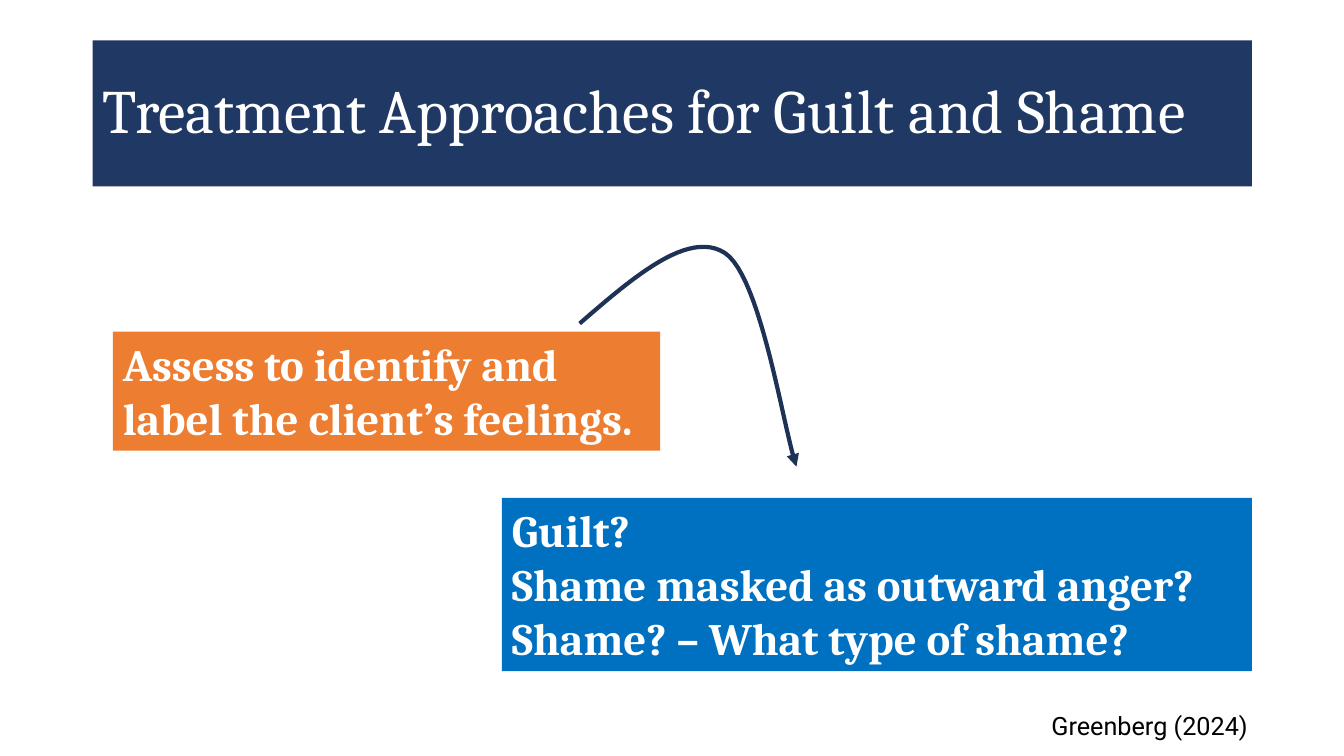
from dataclasses import dataclass

from lxml.etree import SubElement
from pptx import Presentation
from pptx.dml.color import RGBColor
from pptx.enum.text import MSO_ANCHOR, MSO_AUTO_SIZE as AutoSize, PP_ALIGN as Align
from pptx.oxml.ns import qn
from pptx.util import Inches, Pt


@dataclass(frozen=True)
class Theme:
    navy: str = "203864"
    orange: str = "ED7D31"
    blue: str = "0070C0"
    arrow: str = "1E3256"
    white: str = "FFFFFF"
    black: str = "000000"
    serif: str = "Cambria"
    sans: str = "Roboto"
    title_size: int = 44
    step_size: int = 32
    citation_size: int = 18
    arrow_width: int = 3


THEME = Theme()

# Places are percentages of the slide: left, top, width, height.
TITLE = "Treatment Approaches for Guilt and Shame"
TITLE_PLACE = (6.9, 5.33, 86.25, 19.33)

CITATION = "Greenberg (2024) "
CITATION_PLACE = (57.45, 93.33, 36.6, 5.33)

STEPS = [
    (["Assess to identify and label the client’s feelings."],
     (8.4, 43.87, 40.73, 15.73), THEME.orange),
    (["Guilt?", "Shame masked as outward anger?", "Shame? – What type of shame?"],
     (37.35, 65.87, 55.8, 22.93), THEME.blue),
]

# Two cubic curves: the end of the first is the start of the second.
ARROW_POINTS = [
    (43.13, 42.8), (47.19, 36.53), (51.24, 30.4), (53.94, 33.47),
    (56.64, 36.67), (58.29, 56.8), (59.26, 61.73),
]
CURVE_STEPS = 24

deck = Presentation()
deck.slide_width, deck.slide_height = Inches(13.33), Inches(7.5)


def to_slide(*shares):
    """Turn alternating horizontal and vertical percentages into lengths."""
    sides = (deck.slide_width, deck.slide_height) * 2
    return [round(side * share / 100) for side, share in zip(sides, shares)]


def write(shape, lines, font_name, size, color, bold=False, align=Align.LEFT):
    frame = shape.text_frame
    frame.word_wrap = True
    frame.text = "\n".join(lines)
    for paragraph in frame.paragraphs:
        paragraph.alignment = align
        for run in paragraph.runs:
            run.font.name, run.font.size, run.font.bold = font_name, Pt(size), bold
            run.font.color.rgb = RGBColor.from_string(color)


def paint(shape, color):
    shape.fill.solid()
    shape.fill.fore_color.rgb = RGBColor.from_string(color)


def add_text(slide, place, lines, *style, **options):
    box = slide.shapes.add_textbox(*to_slide(*place))
    write(box, lines, *style, **options)
    box.text_frame.auto_size = AutoSize.SHAPE_TO_FIT_TEXT
    return box


def curve_points(controls):
    """Sample one cubic curve, leaving out its start."""
    for step in range(1, CURVE_STEPS + 1):
        t = step / CURVE_STEPS
        weights = ((1 - t) ** 3, 3 * t * (1 - t) ** 2, 3 * t ** 2 * (1 - t), t ** 3)
        yield to_slide(*(sum(w * v for w, v in zip(weights, axis))
                         for axis in zip(*controls)))


def add_curved_arrow(slide):
    builder = slide.shapes.build_freeform(*to_slide(*ARROW_POINTS[0]))
    for first in range(0, len(ARROW_POINTS) - 1, 3):
        builder.add_line_segments(curve_points(ARROW_POINTS[first:first + 4]), close=False)
    arrow = builder.convert_to_shape()
    arrow.shadow.inherit = False
    arrow.fill.background()
    arrow.line.color.rgb = RGBColor.from_string(THEME.arrow)
    arrow.line.width = Pt(THEME.arrow_width)
    outline = arrow.line._get_or_add_ln()
    SubElement(outline, qn("a:round"))
    SubElement(outline, qn("a:tailEnd"), type="triangle")


def main():
    slide = deck.slides.add_slide(deck.slide_layouts[5])

    title = slide.shapes.title
    title.left, title.top, title.width, title.height = to_slide(*TITLE_PLACE)
    paint(title, THEME.navy)
    write(title, [TITLE], THEME.serif, THEME.title_size, THEME.white)
    title.text_frame.auto_size = AutoSize.NONE
    title.text_frame.vertical_anchor = MSO_ANCHOR.MIDDLE
    title.text_frame.paragraphs[0].line_spacing = 0.9

    add_text(slide, CITATION_PLACE, [CITATION], THEME.sans, THEME.citation_size,
             THEME.black, align=Align.RIGHT)
    for lines, place, color in STEPS:
        step = add_text(slide, place, lines, THEME.serif, THEME.step_size,
                        THEME.white, bold=True)
        paint(step, color)
    add_curved_arrow(slide)

    deck.save("out.pptx")


if __name__ == "__main__":
    main()
